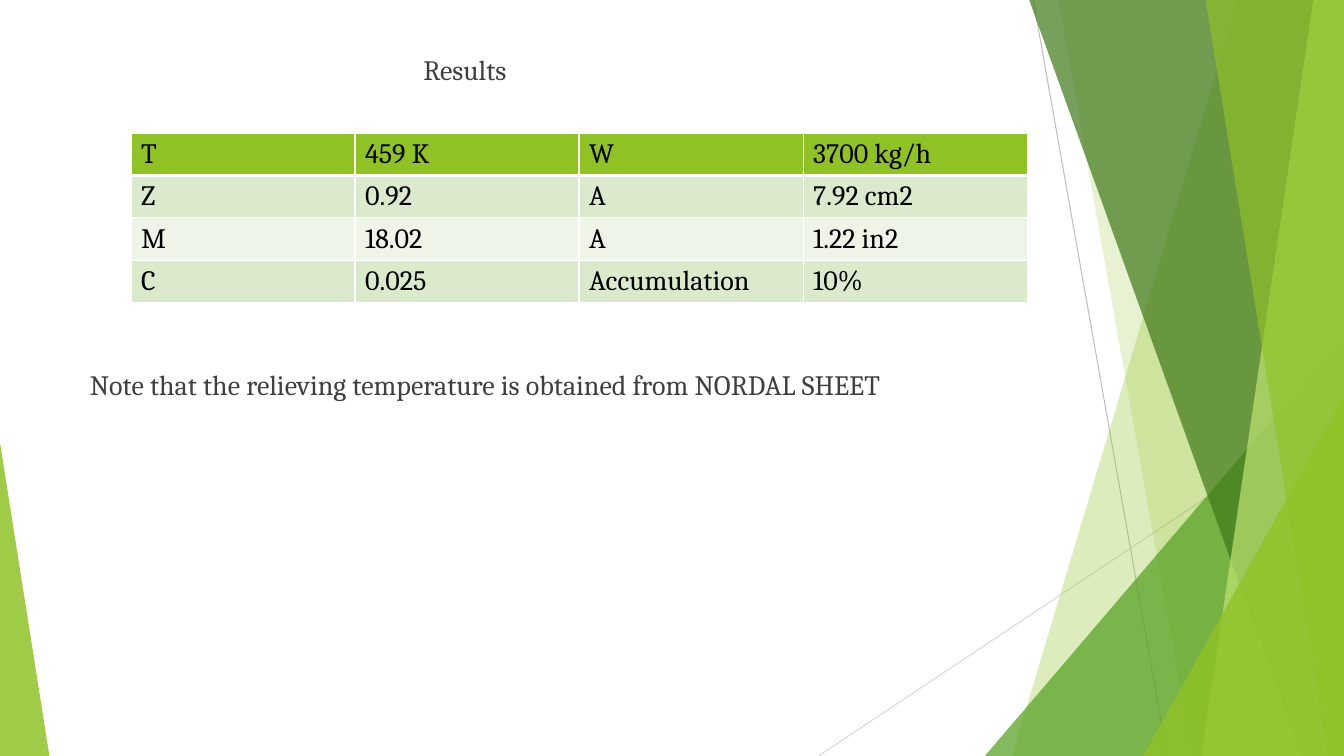
import pptx
import pptx.dml.color
import pptx.enum.shapes
import pptx.enum.text
import pptx.oxml
import pptx.oxml.ns
import pptx.util

WIDTH, HEIGHT = pptx.util.Inches(13.333), pptx.util.Inches(7.5)
GREEN, WHITE = "90C226", "FFFFFF"

# Lines behind the panes: start, end (percent of the slide), colour
LINES = [
    ((76.88, 0), (86.85, 100), "BFBFBF"),
    ((100, 53.73), (60.9, 100), "D9D9D9"),
]
# Panes reaching the right edge: top left x, bottom left x, colour, opacity
BACK_PANES = [(92.1, 75.3, GREEN, 30), (78.75, 88.72, GREEN, 20)]
FRONT_PANES = [
    (76.58, 96.82, "3F7819", 70),
    (97.72, 89.4, "C0E474", 70),
    (89.7, 98.85, GREEN, 65),
]
RESULTS = [
    ("T", "459 K", "W", "3700 kg/h"),
    ("Z", "0.92", "A", "7.92 cm2"),
    ("M", "18.02", "A", "1.22 in2"),
    ("C", "0.025", "Accumulation", "10%"),
]
TABLE_LEFT, TABLE_TOP, COLUMN_SHARE, ROW_SHARE = 9.75, 17.6, 16.67, 5.6


def across(share):
    return round(WIDTH * share / 100)


def down(share):
    return round(HEIGHT * share / 100)


def colour(hex_string):
    return pptx.dml.color.RGBColor.from_string(hex_string)


def paint(shape, hex_string, opacity):
    shape.shadow.inherit = False
    shape.line.fill.background()
    shape.fill.solid()
    shape.fill.fore_color.rgb = colour(hex_string)
    tint = shape.fill._xPr.find(".//" + pptx.oxml.ns.qn("a:srgbClr"))
    alpha = tint.makeelement(pptx.oxml.ns.qn("a:alpha"), {"val": str(opacity * 1000)})
    tint.append(alpha)


def add_line(page, start, end, hex_string):
    line = page.shapes.add_connector(
        pptx.enum.shapes.MSO_CONNECTOR.STRAIGHT,
        across(start[0]), down(start[1]), across(end[0]), down(end[1]))
    line.line.color.rgb = colour(hex_string)
    line.line.width = pptx.util.Pt(0.75)
    properties = line._element.spPr
    properties.append(properties.makeelement(pptx.oxml.ns.qn("a:effectLst"), {}))


def add_pane(page, top_left, bottom_left, hex_string, opacity):
    outline = page.shapes.build_freeform(across(top_left), 0, scale=1.0)
    outline.add_line_segments(
        [(WIDTH, 0), (WIDTH, HEIGHT), (across(bottom_left), HEIGHT)], close=True)
    paint(outline.convert_to_shape(), hex_string, opacity)


def add_corner(page, left, right, top, apex, hex_string, opacity):
    """Right-angled triangle standing on the bottom edge; apex 0 is left, 1 right."""
    triangle = page.shapes.add_shape(
        pptx.enum.shapes.MSO_SHAPE.ISOSCELES_TRIANGLE,
        across(left), down(top), across(right - left), down(100 - top))
    triangle.adjustments[0] = apex
    paint(triangle, hex_string, opacity)


def add_span(para, text, hex_string):
    span = para.add_run()
    span.text = text
    span.font.name = "Cambria"
    span.font.size = pptx.util.Pt(20)
    span.font.color.rgb = colour(hex_string)


def set_text(box, left, top, width, text):
    box.left, box.top = across(left), down(top)
    box.width, box.height = across(width), down(ROW_SHARE)
    frame = box.text_frame
    frame.word_wrap = True
    frame.auto_size = pptx.enum.text.MSO_AUTO_SIZE.NONE
    frame.vertical_anchor = pptx.enum.text.MSO_ANCHOR.MIDDLE
    frame.margin_left = frame.margin_right = 0
    frame.margin_top = frame.margin_bottom = 0
    para = frame.paragraphs[0]
    para.alignment = pptx.enum.text.PP_ALIGN.LEFT
    add_span(para, text, "404040")


def set_borders(cell, widths):
    properties = cell._tc.get_or_add_tcPr()
    for place, (side, points) in enumerate(widths.items()):
        border = pptx.oxml.parse_xml(
            f'<a:{side} {pptx.oxml.ns.nsdecls("a")} w="{pptx.util.Pt(points)}">'
            f'<a:solidFill><a:srgbClr val="{WHITE}"/></a:solidFill></a:{side}>')
        properties.insert(place, border)


def add_results(page):
    rows, columns = len(RESULTS), len(RESULTS[0])
    table = page.shapes.add_table(
        rows, columns, across(TABLE_LEFT), down(TABLE_TOP),
        across(COLUMN_SHARE * columns), down(ROW_SHARE * rows)).table
    for r, values in enumerate(RESULTS):
        fill = GREEN if r == 0 else ("EEF4E8", "DBE9CD")[r % 2]
        for c, value in enumerate(values):
            cell = table.cell(r, c)
            cell.fill.solid()
            cell.fill.fore_color.rgb = colour(fill)
            # The header row is set off by a thicker rule
            set_borders(cell, {"lnL": 1, "lnR": 1,
                               "lnT": 3 if r == 1 else 1,
                               "lnB": 3 if r == 0 else 1})
            para = cell.text_frame.paragraphs[0]
            add_span(para, value, "000000")
            para.runs[0].font.bold = False


def main():
    deck = pptx.Presentation()
    deck.slide_width, deck.slide_height = WIDTH, HEIGHT
    page = deck.slides.add_slide(deck.slide_layouts.get_by_name("Title Only"))

    # Decoration, from back to front
    for line in LINES:
        add_line(page, *line)
    for pane in BACK_PANES:
        add_pane(page, *pane)
    add_corner(page, 73.28, 100, 44.4, 1, "54A021", 72)
    for pane in FRONT_PANES:
        add_pane(page, *pane)
    add_corner(page, 85.05, 100, 52.4, 1, GREEN, 80)
    add_corner(page, 0, 3.68, 58.53, 0, GREEN, 85)

    # Title, table and note
    set_text(page.shapes.title, 31.5, 6.4, 20, "Results")
    add_results(page)
    note = page.shapes.add_textbox(0, 0, 0, 0)
    set_text(note, 6.68, 48, 66,
             "Note that the relieving temperature is obtained from NORDAL SHEET")

    deck.save("out.pptx")


if __name__ == "__main__":
    main()
